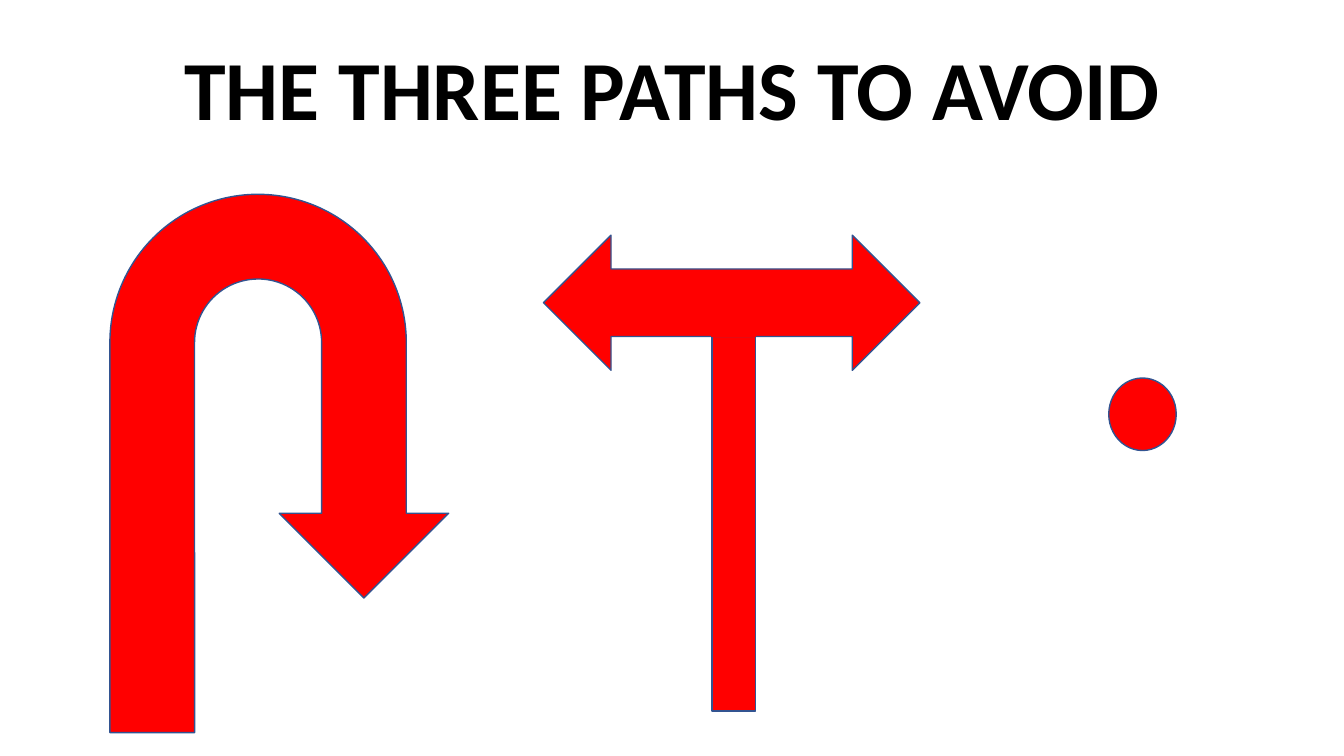
from pptx import Presentation
from pptx.dml.color import RGBColor
from pptx.enum.shapes import MSO_SHAPE
from pptx.enum.text import MSO_ANCHOR, PP_ALIGN
from pptx.util import Pt

UTURN = MSO_SHAPE.U_TURN_ARROW
DOT = MSO_SHAPE.FLOWCHART_CONNECTOR
RECT = MSO_SHAPE.RECTANGLE
DOUBLE = MSO_SHAPE.LEFT_RIGHT_ARROW
BOTTOM = MSO_ANCHOR.BOTTOM
CENTER = PP_ALIGN.CENTER


class Deck:
    """Holds the style and the current slide."""

    font = "Calibri"
    colors = {"text": "000000", "sign": "FF0000", "edge": "325491"}

    def __init__(self, width, height):
        self.deck = Presentation()
        self.deck.slide_width, self.deck.slide_height = Pt(width), Pt(height)
        self.slide = self.deck.slides.add_slide(self.deck.slide_layouts[5])

    def color(self, name):
        return RGBColor.from_string(self.colors[name])

    def title(self, text, left, top, width, height, size):
        box = self.slide.shapes.title
        box.left, box.top = Pt(left), Pt(top)
        box.width, box.height = Pt(width), Pt(height)
        frame = box.text_frame
        frame.text = text
        frame.word_wrap = True
        frame.vertical_anchor = BOTTOM
        line = frame.paragraphs[0]
        line.alignment = CENTER
        line.line_spacing = 0.9
        line.font.name = self.font
        line.font.size = Pt(size)
        line.font.bold = True
        line.font.color.rgb = self.color("text")

    def sign(self, kind, left, top, width, height, edge="edge", adjust=()):
        shape = self.slide.shapes.add_shape(
            kind, Pt(left), Pt(top), Pt(width), Pt(height))
        for i, value in enumerate(adjust):
            shape.adjustments[i] = value
        shape.shadow.inherit = False
        shape.fill.solid()
        shape.fill.fore_color.rgb = self.color("sign")
        shape.line.color.rgb = self.color(edge)
        shape.line.width = Pt(1)

    def save(self):
        self.deck.save("out.pptx")


def main():
    deck = Deck(960, 540)
    deck.title("THE THREE PATHS TO AVOID", 120, 14.5, 720, 88, 60)
    deck.sign(UTURN, 78.5, 138.8, 242, 384.5,
              adjust=(0.25, 0.25, 0.25, 0.44, 0.75))
    deck.sign(DOT, 792, 270, 48.2, 51.8)
    deck.sign(RECT, 508.5, 238.3, 31, 269.5)
    deck.sign(DOUBLE, 388.2, 168, 268.8, 96.5)
    deck.sign(RECT, 508.5, 230.4, 31, 10, edge="sign")
    deck.save()


if __name__ == "__main__":
    main()
